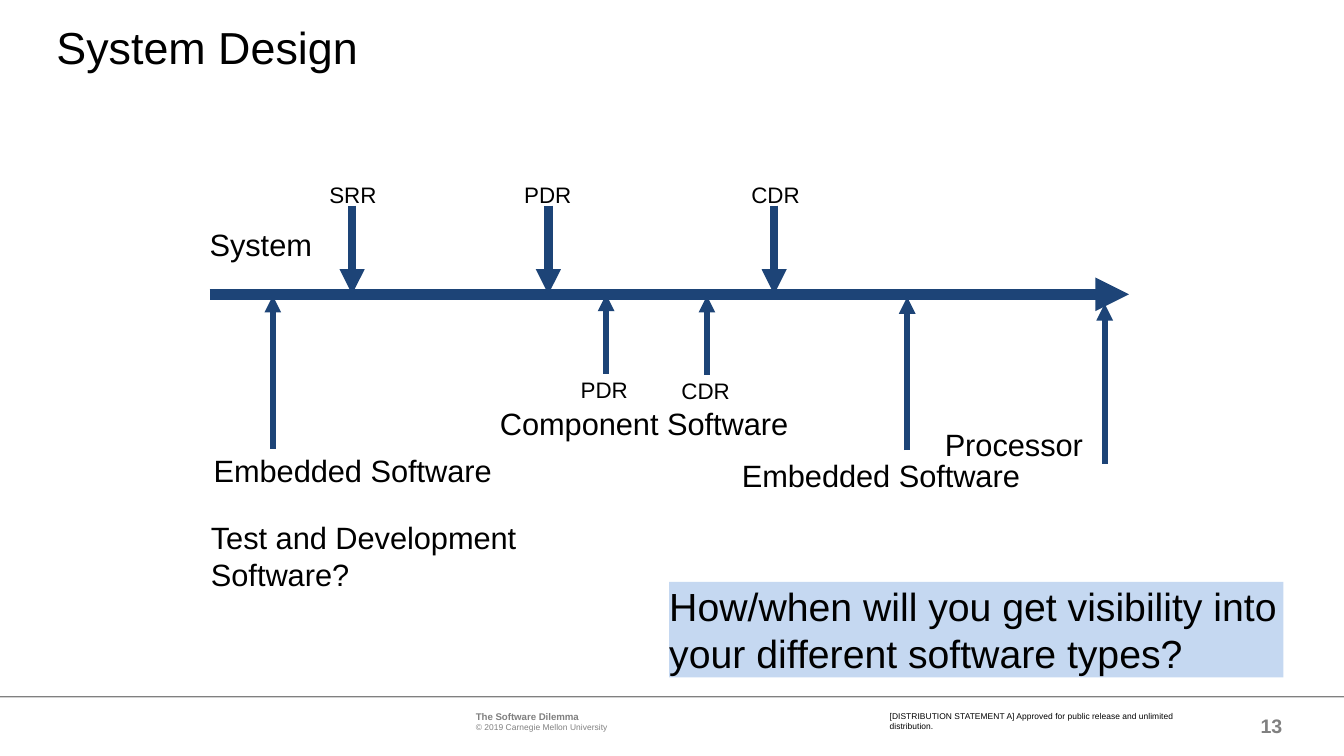
from pptx import Presentation
from pptx.dml.color import RGBColor
from pptx.enum.shapes import MSO_CONNECTOR, MSO_SHAPE
from pptx.enum.text import MSO_ANCHOR, PP_ALIGN
from pptx.oxml.ns import qn
from pptx.util import Inches, Pt
from lxml.etree import SubElement

NAVY, PALE_BLUE, GRAY, BLACK = "1D4477", "C5D8F1", "808080", "000000"
LABEL_SIZE, REVIEW_SIZE = 16.5, 12
TIMELINE_Y = 2.19
REVIEW_WIDTH, REVIEW_HEIGHT = 0.38, 0.2

TITLE = "System Design"
QUESTION = "How/when will you get visibility into your different software types?"
LABELS = [  # text, left, top, width, height
    ("System", 1.56, 1.68, 0.81, 0.28),
    ("Component Software", 3.72, 3.01, 2.75, 0.28),
    ("Processor", 7.03, 3.17, 1.06, 0.28),
    ("Embedded Software", 1.59, 3.36, 2.5, 0.28),
    ("Test and Development Software?", 1.57, 3.86, 2.5, 0.56),
    ("Embedded Software", 5.52, 3.4, 2.5, 0.28),
]
SYSTEM_REVIEWS = [("SRR", 2.62, 2.45), ("PDR", 4.08, 3.9), ("CDR", 5.76, 5.59)]  # text, x, left
COMPONENT_REVIEWS = [("PDR", 4.51, 2.78), ("CDR", 5.26, 2.79)]  # text, x, arrow start
DELIVERIES = [(2.03, 3.34, 2.2), (6.75, 3.35, 2.21), (8.22, 3.45, 2.26)]  # x, start, end
FOOTER = [("The Software Dilemma", 5.2, True),
          ("© 2019 Carnegie Mellon University", 4.5, False)]
DISTRIBUTION = ("[DISTRIBUTION STATEMENT A] Approved for public release "
                "and unlimited distribution.")


def color(value):
    return RGBColor.from_string(value)


def place(shape, left, top, width, height):
    shape.left, shape.top = Inches(left), Inches(top)
    shape.width, shape.height = Inches(width), Inches(height)


def write(shape, lines, ink=BLACK, align=PP_ALIGN.LEFT, anchor=MSO_ANCHOR.TOP):
    """Fill a shape with one paragraph per (text, size, bold) line, without margins."""
    frame = shape.text_frame
    frame.word_wrap = True
    frame.vertical_anchor = anchor
    frame.margin_left = frame.margin_right = frame.margin_top = frame.margin_bottom = 0
    for index, (text, size, bold) in enumerate(lines):
        para = frame.add_paragraph() if index else frame.paragraphs[0]
        para.alignment = align
        span = para.add_run()
        span.text = text
        span.font.name, span.font.size, span.font.bold = "Arial", Pt(size), bold
        span.font.color.rgb = color(ink)


def add_text(slide, lines, *bounds, **style):
    box = slide.shapes.add_textbox(*map(Inches, bounds))
    write(box, lines, **style)


def add_rectangle(slide, fill, *bounds):
    shape = slide.shapes.add_shape(MSO_SHAPE.RECTANGLE, *map(Inches, bounds))
    shape.shadow.inherit = False
    shape.fill.solid()
    shape.fill.fore_color.rgb = color(fill)
    shape.line.fill.background()
    return shape


def add_arrow(slide, start_x, start_y, end_x, end_y, weight):
    arrow = slide.shapes.add_connector(
        MSO_CONNECTOR.STRAIGHT, *map(Inches, (start_x, start_y, end_x, end_y)))
    arrow.line.color.rgb = color(NAVY)
    arrow.line.width = Pt(weight)
    line = arrow._element.spPr.find(qn("a:ln"))
    SubElement(line, qn("a:tailEnd"), type="triangle")
    SubElement(arrow._element.spPr, qn("a:effectLst"))


def add_review(slide, name, left, top):
    add_text(slide, [(name, REVIEW_SIZE, False)], left, top, REVIEW_WIDTH, REVIEW_HEIGHT)


def add_footer(slide):
    add_rectangle(slide, GRAY, 0, 5.18, 10, 0.01)
    add_text(slide, FOOTER, 3.54, 5.29, 2.92, 0.16, ink=GRAY)
    add_text(slide, [(DISTRIBUTION, 4.5, False)], 6.62, 5.29, 2.29, 0.15)
    add_text(slide, [("13", 10.5, True)], 9.1, 5.25, 0.44, 0.3,
             ink=GRAY, align=PP_ALIGN.RIGHT, anchor=MSO_ANCHOR.MIDDLE)


def main():
    deck = Presentation()
    deck.slide_width = Inches(10)
    deck.slide_height = deck.slide_width * 9 // 16
    slide = deck.slides.add_slide(deck.slide_layouts[5])

    title = slide.shapes.title
    place(title, 0.42, 0.19, 8.5, 0.7)
    write(title, [(TITLE, 24, False)])
    title.text_frame.paragraphs[0].line_spacing = 0.9
    add_footer(slide)

    add_arrow(slide, 1.56, TIMELINE_Y, 8.4, TIMELINE_Y, 6)
    for name, x, left in SYSTEM_REVIEWS:
        add_arrow(slide, x, 1.53, x, TIMELINE_Y, 4.5)
        add_review(slide, name, left, 1.35)
    for name, x, start in COMPONENT_REVIEWS:
        add_arrow(slide, x, start, x, start - 0.59, 3)
        add_review(slide, name, x - REVIEW_WIDTH / 2, start + 0.02)
    for x, start, end in DELIVERIES:
        add_arrow(slide, x, start, x, end, 3)

    question = add_rectangle(slide, PALE_BLUE, 4.98, 4.33, 4.57, 0.71)
    write(question, [(QUESTION, 21, False)])
    for text, *bounds in LABELS:
        add_text(slide, [(text, LABEL_SIZE, False)], *bounds)
    deck.save("out.pptx")


if __name__ == "__main__":
    main()
